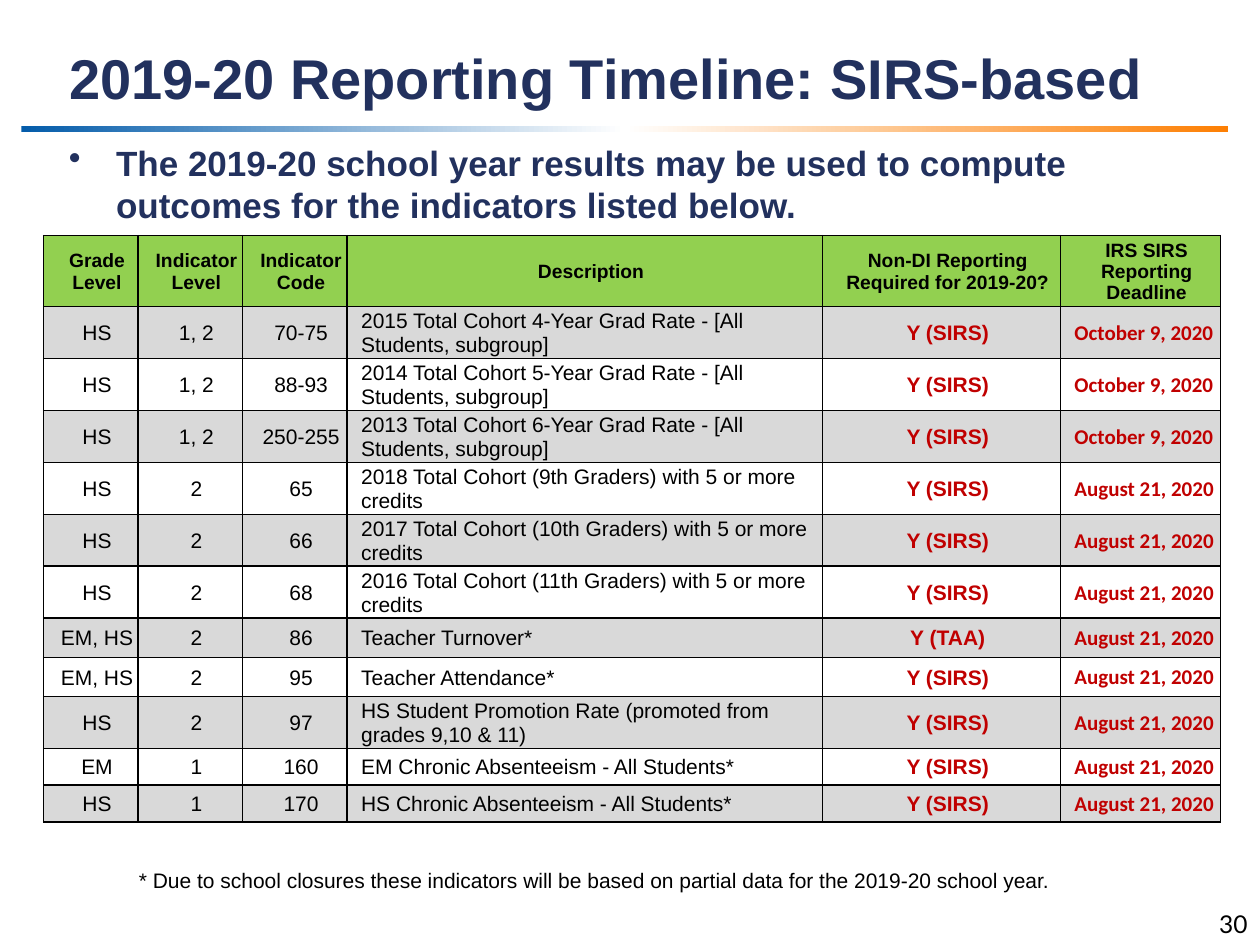
from copy import deepcopy
from typing import NamedTuple

from lxml.etree import SubElement
from pptx import Presentation
from pptx.dml.color import RGBColor
from pptx.enum.shapes import MSO_SHAPE
from pptx.enum.text import MSO_ANCHOR, MSO_AUTO_SIZE, PP_ALIGN
from pptx.oxml.ns import qn
from pptx.util import Cm, Pt

COLORS = {
    "navy": "22315E",
    "black": "000000",
    "red": "C00000",
    "green": "92D050",
    "gray": "D9D9D9",
    "blue": "045CAA",
    "white": "FFFFFF",
    "orange": "FD7F03",
}


class Style(NamedTuple):
    size: float
    color: str = "black"
    bold: bool = False
    font: str = "Arial"
    align: PP_ALIGN = PP_ALIGN.LEFT


class Column(NamedTuple):
    heading: str
    width: float
    style: Style


class Indicator(NamedTuple):
    grade: str
    level: str
    code: str
    description: str
    required: str
    deadline: str
    height: float


HEADING = Style(11, bold=True, align=PP_ALIGN.CENTER)
CENTERED = Style(12, align=PP_ALIGN.CENTER)
REQUIRED = Style(12, "red", True, align=PP_ALIGN.CENTER)
DEADLINE = Style(12, "red", True, "Calibri")

COLUMNS = [
    Column("Grade Level", 1.9, CENTERED),
    Column("Indicator Level", 2.11, CENTERED),
    Column("Indicator Code", 2.11, CENTERED),
    Column("Description", 9.58, Style(12)),
    Column("Non-DI Reporting Required for 2019-20?", 4.8, REQUIRED),
    Column("IRS SIRS Reporting Deadline", 3.22, DEADLINE),
]
HEADING_HEIGHT, TALL, SHORT, LOW = 1.41, 1.04, 0.79, 0.74
OCTOBER, AUGUST = "October 9, 2020", "August 21, 2020"
SIRS, TAA = "Y (SIRS)", "Y (TAA)"

INDICATORS = [
    Indicator("HS", "1, 2", "70-75",
              "2015 Total Cohort 4-Year Grad Rate - [All Students, subgroup]", SIRS, OCTOBER, TALL),
    Indicator("HS", "1, 2", "88-93",
              "2014 Total Cohort 5-Year Grad Rate - [All Students, subgroup]", SIRS, OCTOBER, TALL),
    Indicator("HS", "1, 2", "250-255",
              "2013 Total Cohort 6-Year Grad Rate - [All Students, subgroup]", SIRS, OCTOBER, TALL),
    Indicator("HS", "2", "65",
              "2018 Total Cohort (9th Graders) with 5 or more credits", SIRS, AUGUST, TALL),
    Indicator("HS", "2", "66",
              "2017 Total Cohort (10th Graders) with 5 or more credits", SIRS, AUGUST, TALL),
    Indicator("HS", "2", "68",
              "2016 Total Cohort (11th Graders) with 5 or more credits", SIRS, AUGUST, TALL),
    Indicator("EM, HS", "2", "86", "Teacher Turnover*", TAA, AUGUST, SHORT),
    Indicator("EM, HS", "2", "95", "Teacher Attendance*", SIRS, AUGUST, SHORT),
    Indicator("HS", "2", "97",
              "HS Student Promotion Rate (promoted from grades 9,10 & 11)", SIRS, AUGUST, TALL),
    Indicator("EM", "1", "160", "EM Chronic Absenteeism - All Students*", SIRS, AUGUST, LOW),
    Indicator("HS", "1", "170", "HS Chronic Absenteeism - All Students*", SIRS, AUGUST, LOW),
]


def rgb(name: str) -> RGBColor:
    return RGBColor.from_string(COLORS[name])


def format_paragraph(paragraph, style: Style) -> None:
    paragraph.alignment = style.align
    for run in paragraph.runs:
        run.font.name = style.font
        run.font.size = Pt(style.size)
        run.font.bold = style.bold
        run.font.color.rgb = rgb(style.color)


def set_indent(paragraph, left: float, first_line: float = 0) -> None:
    properties = paragraph._p.get_or_add_pPr()
    properties.set("marL", str(Cm(left)))
    properties.set("indent", str(Cm(first_line)))


def add_text(slide, text: str, left: float, top: float, width: float, height: float,
             style: Style):
    box = slide.shapes.add_textbox(Cm(left), Cm(top), Cm(width), Cm(height))
    box.text_frame.word_wrap = True
    box.text_frame.text = text
    paragraph = box.text_frame.paragraphs[0]
    format_paragraph(paragraph, style)
    return paragraph


def add_title(slide, text: str) -> None:
    title = slide.shapes.title
    title.left, title.top, title.width, title.height = Cm(1.14), Cm(0), Cm(23.14), Cm(2.36)
    frame = title.text_frame
    frame.text = text
    frame.auto_size = MSO_AUTO_SIZE.NONE
    frame.vertical_anchor = MSO_ANCHOR.BOTTOM
    frame.paragraphs[0].line_spacing = Pt(36)
    format_paragraph(frame.paragraphs[0], Style(32, "navy", True))


def add_gradient_rule(slide) -> None:
    rule = slide.shapes.add_shape(MSO_SHAPE.RECTANGLE, Cm(0.43), Cm(2.54), Cm(24.33), Cm(0.13))
    rule.shadow.inherit = False
    rule.line.fill.background()
    rule.fill.gradient()
    rule.fill.gradient_angle = 0
    stop_list = rule._element.spPr.find(qn("a:gradFill")).find(qn("a:gsLst"))
    stop_list.append(deepcopy(stop_list[0]))
    for index, name in enumerate(("blue", "white", "orange")):
        stop = rule.fill.gradient_stops[index]
        stop.position = index / 2
        stop.color.rgb = rgb(name)


def add_borders(cell) -> None:
    properties = cell._tc.get_or_add_tcPr()
    for side in ("a:lnL", "a:lnR", "a:lnT", "a:lnB"):
        line = SubElement(properties, qn(side), w=str(Pt(1)))
        fill = SubElement(line, qn("a:solidFill"))
        SubElement(fill, qn("a:srgbClr"), val=COLORS["black"])


def fill_cell(cell, text: str, style: Style, background: str) -> None:
    add_borders(cell)
    if background:
        cell.fill.solid()
        cell.fill.fore_color.rgb = rgb(background)
    else:
        cell.fill.background()
    cell.margin_left = cell.margin_right = cell.margin_top = Cm(0.03)
    cell.margin_bottom = 0
    cell.vertical_anchor = MSO_ANCHOR.MIDDLE
    cell.text_frame.text = text
    paragraph = cell.text_frame.paragraphs[0]
    set_indent(paragraph, 0.25)
    format_paragraph(paragraph, style)


def add_indicator_table(slide) -> None:
    table = slide.shapes.add_table(len(INDICATORS) + 1, len(COLUMNS),
                                   Cm(0.88), Cm(4.75), Cm(23.72), Cm(11.79)).table
    table.first_row = table.horz_banding = False
    table.rows[0].height = Cm(HEADING_HEIGHT)
    for index, column in enumerate(COLUMNS):
        table.columns[index].width = Cm(column.width)
        fill_cell(table.cell(0, index), column.heading, HEADING, "green")
    for row, indicator in enumerate(INDICATORS, start=1):
        table.rows[row].height = Cm(indicator.height)
        background = "gray" if row % 2 else ""
        for index, column in enumerate(COLUMNS):
            fill_cell(table.cell(row, index), indicator[index], column.style, background)


def main() -> None:
    presentation = Presentation()
    presentation.slide_width, presentation.slide_height = Cm(25.4), Cm(19.05)
    slide = presentation.slides.add_slide(presentation.slide_layouts[5])
    add_gradient_rule(slide)
    add_title(slide, "2019-20 Reporting Timeline: SIRS-based")
    add_text(slide, "30", 19.48, 18.21, 5.92, 0.84,
             Style(14, font="Lato", align=PP_ALIGN.RIGHT))
    add_text(slide, "* Due to school closures these indicators will be based on partial data "
             "for the 2019-20 school year.", 2.55, 17.37, 21.73, 0.77, Style(12))
    add_indicator_table(slide)
    statement = add_text(slide, "The 2019-20 school year results may be used to compute outcomes "
                         "for the indicators listed below.", 1.14, 2.72, 23.44, 1.97,
                         Style(20, "navy", True))
    set_indent(statement, 0.95, -0.95)
    SubElement(statement._p.get_or_add_pPr(), qn("a:buChar"), char="•")
    presentation.save("out.pptx")


if __name__ == "__main__":
    main()
